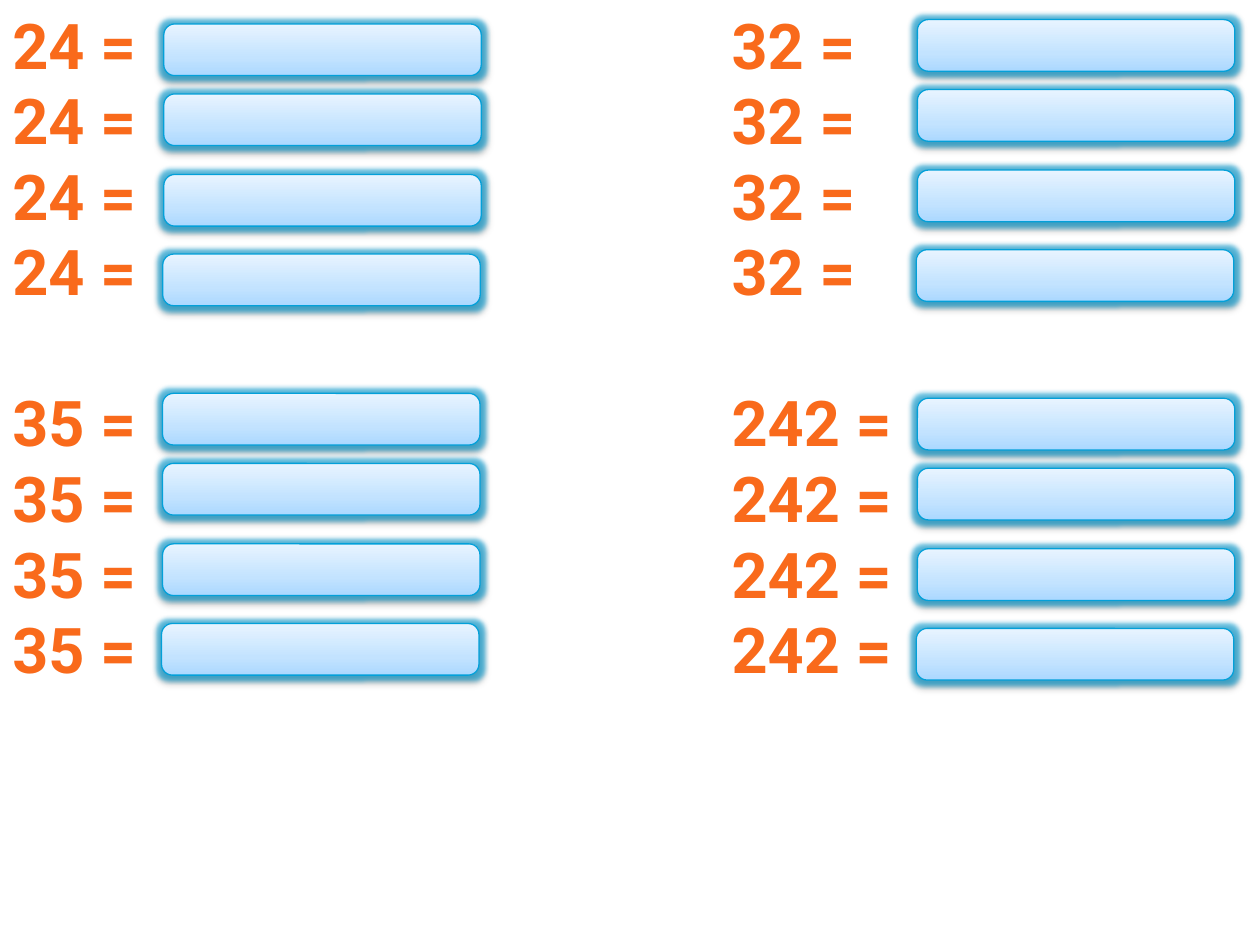
from lxml.etree import SubElement
from pptx import Presentation
from pptx.dml.color import RGBColor
from pptx.enum.shapes import MSO_SHAPE
from pptx.enum.text import MSO_AUTO_SIZE
from pptx.oxml import parse_xml
from pptx.oxml.ns import qn
from pptx.util import Pt

# Content: one row of exercise blocks per entry, each block four lines long
BLOCK_ROWS = [("24 =", "32 ="), ("35 =", "242 =")]
LINES = 4

# Layout in points
LINE_PITCH = 43.1
SECOND_COLUMN = 411
BOX_W, BOX_H = 181.4, 29.5
BLOCK_STARTS = [(93.6, 13.7), (524.2, 11.2), (92.9, 224.8), (524.2, 227.6)]
BOX_STEPS = [(0, 0), (0, 40), (0, 86), (-0.6, 131.5)]

ORANGE, BLUE = "F96A1B", "03A0D9"
NS = 'xmlns:a="http://schemas.openxmlformats.org/drawingml/2006/main"'
GRADIENT = f"""<a:gradFill {NS} rotWithShape="1"><a:gsLst>
<a:gs pos="0"><a:srgbClr val="ABD8FF"/></a:gs>
<a:gs pos="35000"><a:srgbClr val="C3E3FF"/></a:gs>
<a:gs pos="100000"><a:srgbClr val="E8F4FF"/></a:gs>
</a:gsLst><a:lin ang="16200000" scaled="1"/></a:gradFill>"""
EFFECTS = f"""<a:effectLst {NS}>
<a:glow rad="{Pt(5)}"><a:srgbClr val="{BLUE}"><a:alpha val="60000"/></a:srgbClr></a:glow>
<a:outerShdw blurRad="{Pt(3.1)}" dist="{Pt(1.6)}" dir="5400000" rotWithShape="0">
<a:srgbClr val="000000"><a:alpha val="38000"/></a:srgbClr></a:outerShdw>
</a:effectLst>"""


def rgb(value):
    return RGBColor.from_string(value)


def add_equation(p, left, right):
    tabs = SubElement(p._p.get_or_add_pPr(), qn("a:tabLst"))
    SubElement(tabs, qn("a:tab"), pos=str(Pt(SECOND_COLUMN)), algn="l")
    r = p.add_run()
    r.text = f"{left}\t{right}"
    r.font.name = "Roboto"
    r.font.size = Pt(36)
    r.font.bold = True
    r.font.color.rgb = rgb(ORANGE)


def add_answer_box(s, x, y):
    sp = s.shapes.add_shape(MSO_SHAPE.ROUNDED_RECTANGLE,
                            Pt(x), Pt(y), Pt(BOX_W), Pt(BOX_H))
    sp.adjustments[0] = 0.211
    sp.line.color.rgb = rgb(BLUE)
    sp.line.width = Pt(0.75)
    props = sp._element.spPr
    props.insert(2, parse_xml(GRADIENT))
    props.append(parse_xml(EFFECTS))


prs = Presentation()
prs.slide_width, prs.slide_height = Pt(720), Pt(540)
s = prs.slides.add_slide(prs.slide_layouts[6])

# Equations, with a one-line gap between the block rows
tf = s.shapes.add_textbox(0, 0, Pt(720), Pt(499)).text_frame
tf.word_wrap = True
tf.auto_size = MSO_AUTO_SIZE.SHAPE_TO_FIT_TEXT
for row, (left, right) in enumerate(BLOCK_ROWS):
    for line in range(LINES):
        first = row == line == 0
        p = tf.paragraphs[0] if first else tf.add_paragraph()
        if row and line == 0:
            p.space_before = Pt(LINE_PITCH)
        add_equation(p, left, right)

# Answer boxes
for x, y in BLOCK_STARTS:
    for dx, dy in BOX_STEPS:
        add_answer_box(s, x + dx, y + dy)

prs.save("out.pptx")
